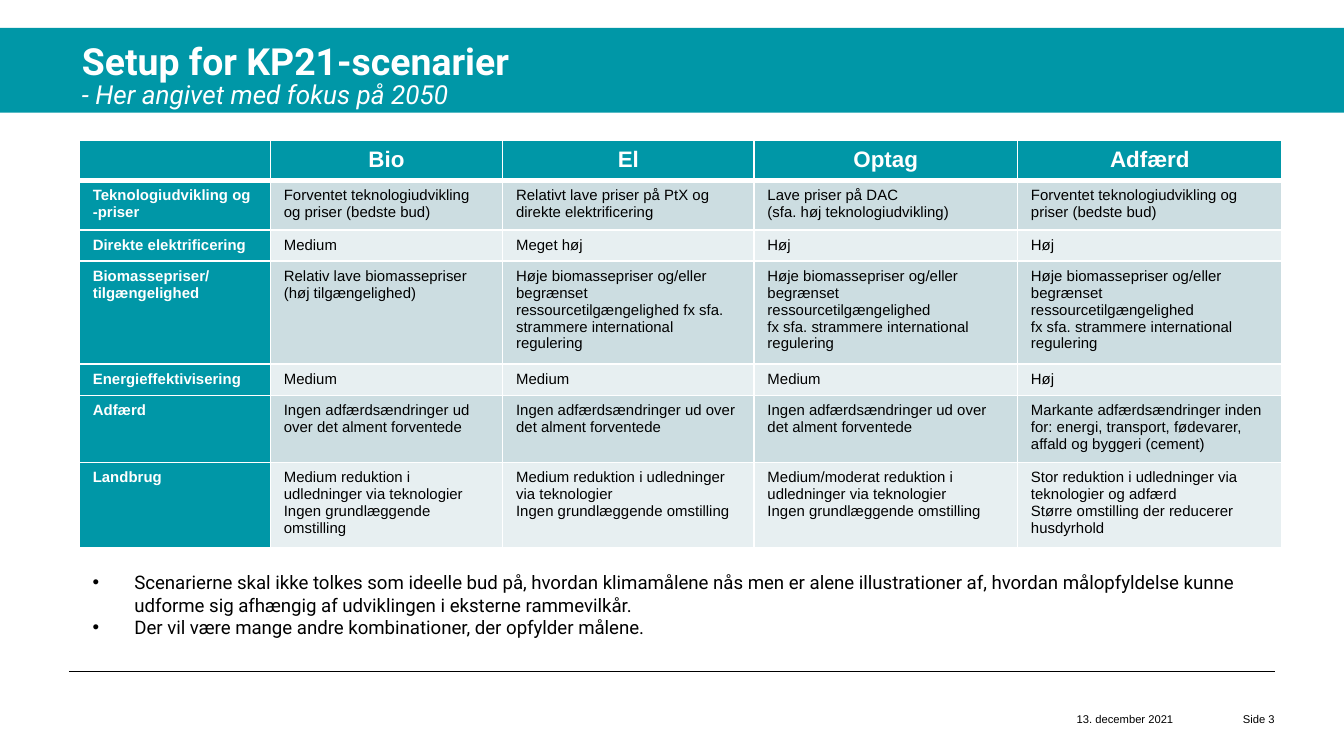
import pptx
import pptx.dml.color
import pptx.enum.shapes
import pptx.enum.text
import pptx.oxml.ns
import pptx.util
from lxml import etree
from pptx.util import Cm

Color = pptx.dml.color.RGBColor
Align = pptx.enum.text.PP_ALIGN
Pt = pptx.util.Pt
qn = pptx.oxml.ns.qn

TEAL = Color(0x00, 0x97, 0xA7)
DARK = Color(0xCC, 0xDD, 0xE1)
LIGHT = Color(0xE7, 0xEF, 0xF1)
WHITE = Color(0xFF, 0xFF, 0xFF)
BLACK = Color(0x00, 0x00, 0x00)

TITLE = {"name": "Roboto", "size": Pt(20), "bold": True}
SUB = {"name": "Roboto", "size": Pt(14), "italic": True}
NOTE = {"name": "Roboto", "size": Pt(10)}
FOOT = {"name": "Arial", "size": Pt(6)}
HEAD = {"name": "Arial", "size": Pt(12), "bold": True}
LABEL = {"name": "Arial", "size": Pt(8), "bold": True}
BODY = {"name": "Arial", "size": Pt(8), "bold": False}

COLS = [3.61, 4.39, 4.75, 4.98, 5.0]
ROWS = [0.71, 0.87, 0.58, 1.83, 0.58, 1.21, 1.51]

BEST = "Forventet teknologiudvikling og priser (bedste bud)"
SCARCE = ("Høje biomassepriser og/eller begrænset ressourcetilgængelighed{}"
          "fx sfa. strammere international regulering")
SAME = "Ingen adfærdsændringer ud over det alment forventede"
FARM = ("{} reduktion i udledninger via teknologier\n"
        "Ingen grundlæggende omstilling")
CELLS = [
    ["", "Bio", "El", "Optag", "Adfærd"],
    ["Teknologiudvikling og\n-priser", BEST,
     "Relativt lave priser på PtX og direkte elektrificering",
     "Lave priser på DAC\n(sfa. høj teknologiudvikling)", BEST],
    ["Direkte elektrificering", "Medium", "Meget høj", "Høj", "Høj"],
    ["Biomassepriser/\ntilgængelighed",
     "Relativ lave biomassepriser\n(høj tilgængelighed)",
     SCARCE.format(" "), SCARCE.format("\n"), SCARCE.format("\n")],
    ["Energieffektivisering", "Medium", "Medium", "Medium", "Høj"],
    ["Adfærd", SAME, SAME, SAME,
     "Markante adfærdsændringer inden for: energi, transport, fødevarer, "
     "affald og byggeri (cement)"],
    ["Landbrug", FARM.format("Medium"), FARM.format("Medium"),
     FARM.format("Medium/moderat"),
     "Stor reduktion i udledninger via teknologier og adfærd\n"
     "Større omstilling der reducerer husdyrhold"],
]
NOTES = [
    "Scenarierne skal ikke tolkes som ideelle bud på, hvordan klimamålene nås "
    "men er alene illustrationer af, hvordan målopfyldelse kunne udforme sig "
    "afhængig af udviklingen i eksterne rammevilkår.",
    "Der vil være mange andre kombinationer, der opfylder målene.",
]


def style(para, form, color, align=Align.LEFT):
    para.alignment = align
    for key, value in form.items():
        setattr(para.font, key, value)
    para.font.color.rgb = color


def add_band(slide):
    band = slide.shapes.add_shape(
        pptx.enum.shapes.MSO_SHAPE.RECTANGLE, 0, Cm(0.53), Cm(25.5), Cm(1.6))
    band.shadow.inherit = False
    band.fill.solid()
    band.fill.fore_color.rgb = TEAL
    band.line.fill.background()


def add_rule(slide):
    rule = slide.shapes.add_connector(
        pptx.enum.shapes.MSO_CONNECTOR.STRAIGHT,
        Cm(1.3), Cm(12.7), Cm(24.1), Cm(12.7))
    rule.line.color.rgb = BLACK
    rule.line.width = Pt(0.5)
    etree.SubElement(rule._element.spPr, qn("a:effectLst"))


def add_text(slide, place, lines, form, color, align=Align.LEFT,
             top=0.13, bullet=False):
    """Add a text box; place is left, top, width, height in cm."""
    frame = slide.shapes.add_textbox(*map(Cm, place)).text_frame
    frame.word_wrap = True
    frame.margin_top = Cm(top)
    frame.margin_bottom = 0
    frame.text = "\n".join(lines)
    for para in frame.paragraphs:
        if bullet:
            add_bullet(para)
        style(para, form, color, align)


def add_bullet(para):
    props = para._p.get_or_add_pPr()
    props.set("marL", str(Cm(0.79)))
    props.set("indent", str(-Cm(0.79)))
    etree.SubElement(props, qn("a:buFont"), typeface="Arial")
    etree.SubElement(props, qn("a:buChar"), char="•")


def add_edge(cell, side, width):
    edge = etree.SubElement(cell._tc.get_or_add_tcPr(), qn("a:ln" + side),
                            w=str(Pt(width)))
    fill = etree.SubElement(edge, qn("a:solidFill"))
    etree.SubElement(fill, qn("a:srgbClr"), val=str(WHITE))


def fill_cell(cell, row, col, text):
    for side in "LRTB":
        thick = (row, side) in ((0, "B"), (1, "T"))
        add_edge(cell, side, 3 if thick else 1)
    cell.fill.solid()
    cell.text = text.replace("\n", "\v")
    para = cell.text_frame.paragraphs[0]
    if row == 0:
        cell.fill.fore_color.rgb = TEAL
        style(para, HEAD, WHITE, Align.CENTER)
    elif col == 0:
        cell.fill.fore_color.rgb = TEAL
        style(para, LABEL, WHITE)
    else:
        cell.fill.fore_color.rgb = DARK if row % 2 else LIGHT
        style(para, BODY, BLACK)


def add_grid(slide):
    grid = slide.shapes.add_table(
        len(ROWS), len(COLS), Cm(1.5), Cm(2.65),
        Cm(sum(COLS)), Cm(sum(ROWS))).table
    for col, width in zip(grid.columns, COLS):
        col.width = Cm(width)
    for row, height in zip(grid.rows, ROWS):
        row.height = Cm(height)
    for row, texts in enumerate(CELLS):
        for col, text in enumerate(texts):
            fill_cell(grid.cell(row, col), row, col, text)


def main():
    deck = pptx.Presentation()
    deck.slide_width = Cm(25.4)
    deck.slide_height = Cm(14.29)
    slide = deck.slides.add_slide(deck.slide_layouts[6])
    add_band(slide)
    add_rule(slide)
    add_text(slide, (20.1, 13.33, 3.43, 0.76), ["13. december 2021"],
             FOOT, BLACK)
    add_text(slide, (22.1, 13.33, 2.24, 0.76), ["Side 3"],
             FOOT, BLACK, Align.RIGHT)
    add_text(slide, (1.3, 1.35, 23.24, 0.78),
             ["- Her angivet med fokus på 2050"], SUB, WHITE, top=0.14)
    add_text(slide, (1.3, 0.53, 23.24, 0.82),
             ["Setup for KP21-scenarier"], TITLE, WHITE, top=0.19)
    add_grid(slide)
    add_text(slide, (1.5, 10.67, 22.7, 1.55), NOTES, NOTE, BLACK, bullet=True)
    deck.save("out.pptx")


if __name__ == "__main__":
    main()
